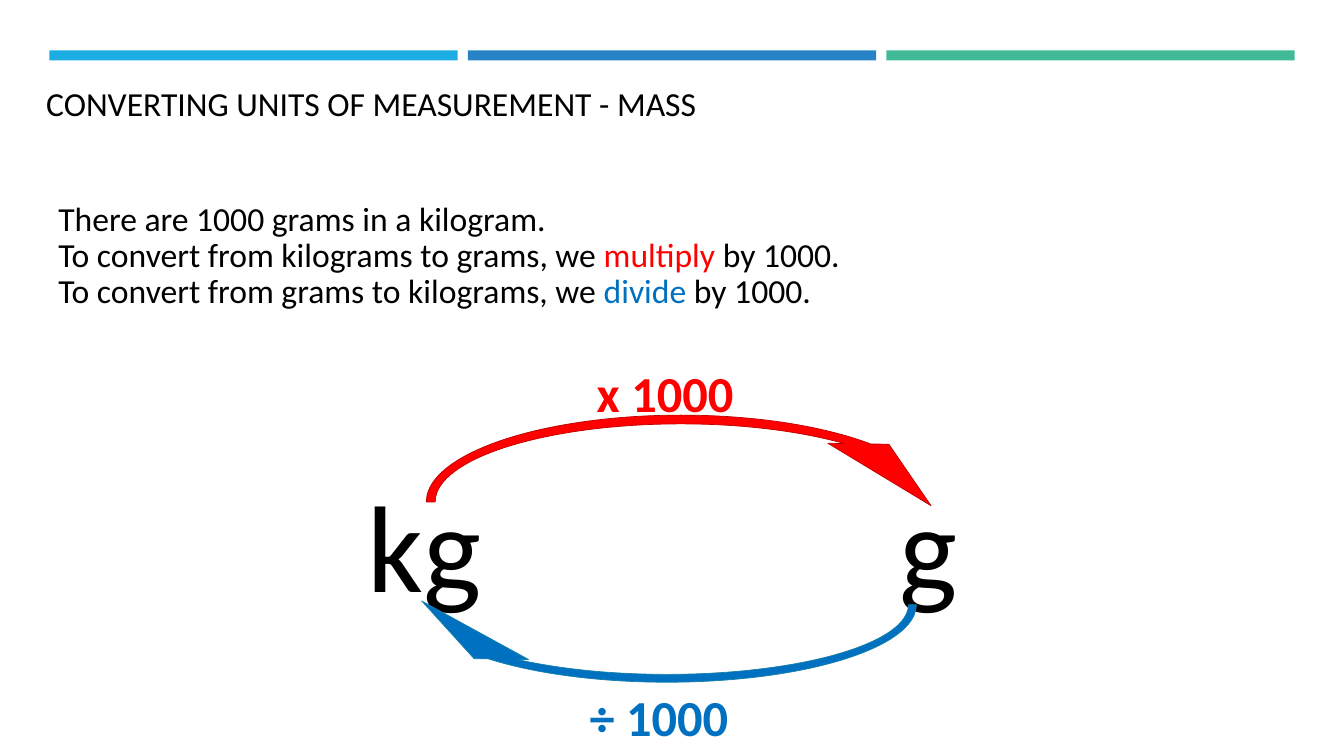
import pptx
import pptx.dml.color
import pptx.enum.shapes
import pptx.enum.text
import pptx.util

Inches = pptx.util.Inches
Pt = pptx.util.Pt
SHAPE = pptx.enum.shapes.MSO_SHAPE

COLORS = {
    "black": "000000",
    "red": "FF0000",
    "dark red": "C00000",
    "blue": "0070C0",
    "teal blue": "1580A9",
    "bar cyan": "1CADE4",
    "bar blue": "2683C6",
    "bar green": "42BA97",
}


def color(name):
    return pptx.dml.color.RGBColor.from_string(COLORS[name])


def add_text(paragraph, text, size=24, fill="black", bold=False):
    run = paragraph.add_run()
    run.text = text
    run.font.name = "Calibri"
    run.font.size = Pt(size)
    run.font.bold = bold
    run.font.color.rgb = color(fill)


class SlideBuilder:
    def __init__(self, slide):
        self.slide = slide

    def shape(self, kind, left, top, width, height, fill, line=None):
        shape = self.slide.shapes.add_shape(
            kind, Inches(left), Inches(top), Inches(width), Inches(height))
        shape.shadow.inherit = False
        shape.fill.solid()
        shape.fill.fore_color.rgb = color(fill)
        if line:
            shape.line.color.rgb = color(line)
            shape.line.width = Pt(0.5)
        else:
            shape.line.fill.background()
        return shape

    def curved_arrow(self, left, top, width, height, fill, line):
        arrow = self.shape(SHAPE.CIRCULAR_ARROW, left, top, width, height, fill, line)
        for index, value in enumerate((0.039, 11.423, 205.102, 108, 0.135)):
            arrow.adjustments[index] = value
        return arrow

    def text(self, left, top, width, height, runs, inset=0.05, **style):
        """Each run is a (text, color name) pair."""
        box = self.slide.shapes.add_textbox(
            Inches(left), Inches(top), Inches(width), Inches(height))
        frame = box.text_frame
        frame.word_wrap = True
        frame.margin_top = Inches(inset)
        frame.vertical_anchor = pptx.enum.text.MSO_ANCHOR.TOP
        for text, fill in runs:
            add_text(frame.paragraphs[0], text, fill=fill, **style)


def main():
    presentation = pptx.Presentation()
    presentation.slide_width = Inches(13.33)
    presentation.slide_height = Inches(7.5)
    slide = presentation.slides.add_slide(presentation.slide_layouts[6])
    builder = SlideBuilder(slide)

    # Bars across the top
    for index, fill in enumerate(("bar cyan", "bar blue", "bar green")):
        builder.shape(SHAPE.RECTANGLE, 0.49 + 4.15 * index, 0.5, 4.05, 0.1, fill)

    # Title
    builder.text(0.36, 0.77, 12.06, 1.11,
                 [("CONVERTING UNITS OF MEASUREMENT - MASS", "black")])

    # Conversion rules
    rules = (
        [("There are 1000 grams in a kilogram.", "black")],
        [("To convert from kilograms to grams, we ", "black"),
         ("multiply", "red"), (" by 1000.", "black")],
        [("To convert from grams to kilograms, we ", "black"),
         ("divide", "blue"), (" by 1000.", "black")],
    )
    for index, runs in enumerate(rules):
        builder.text(0.48, 1.91 + 0.36 * index, 11.27, 0.5, runs)

    # Units
    for left, unit in ((3.55, "kg"), (8.82, "g")):
        builder.text(left, 4.54, 2.14, 1.55, [(unit, "black")], inset=0.12, size=88)

    # Arrows between the units
    builder.curved_arrow(3.97, 3.86, 5.57, 2.24, "red", "dark red")
    back_arrow = builder.curved_arrow(3.91, 5, 5.41, 2, "blue", "teal blue")
    transform = back_arrow.element.spPr.xfrm
    transform.set("flipH", "1")
    transform.set("flipV", "1")

    # Arrow labels
    for left, top, label, fill in ((5.82, 3.51, "x 1000", "red"),
                                   (5.75, 6.73, "÷ 1000", "blue")):
        builder.text(left, top, 1.59, 0.75, [(label, fill)],
                     inset=0.08, size=36, bold=True)

    presentation.save("out.pptx")


if __name__ == "__main__":
    main()
